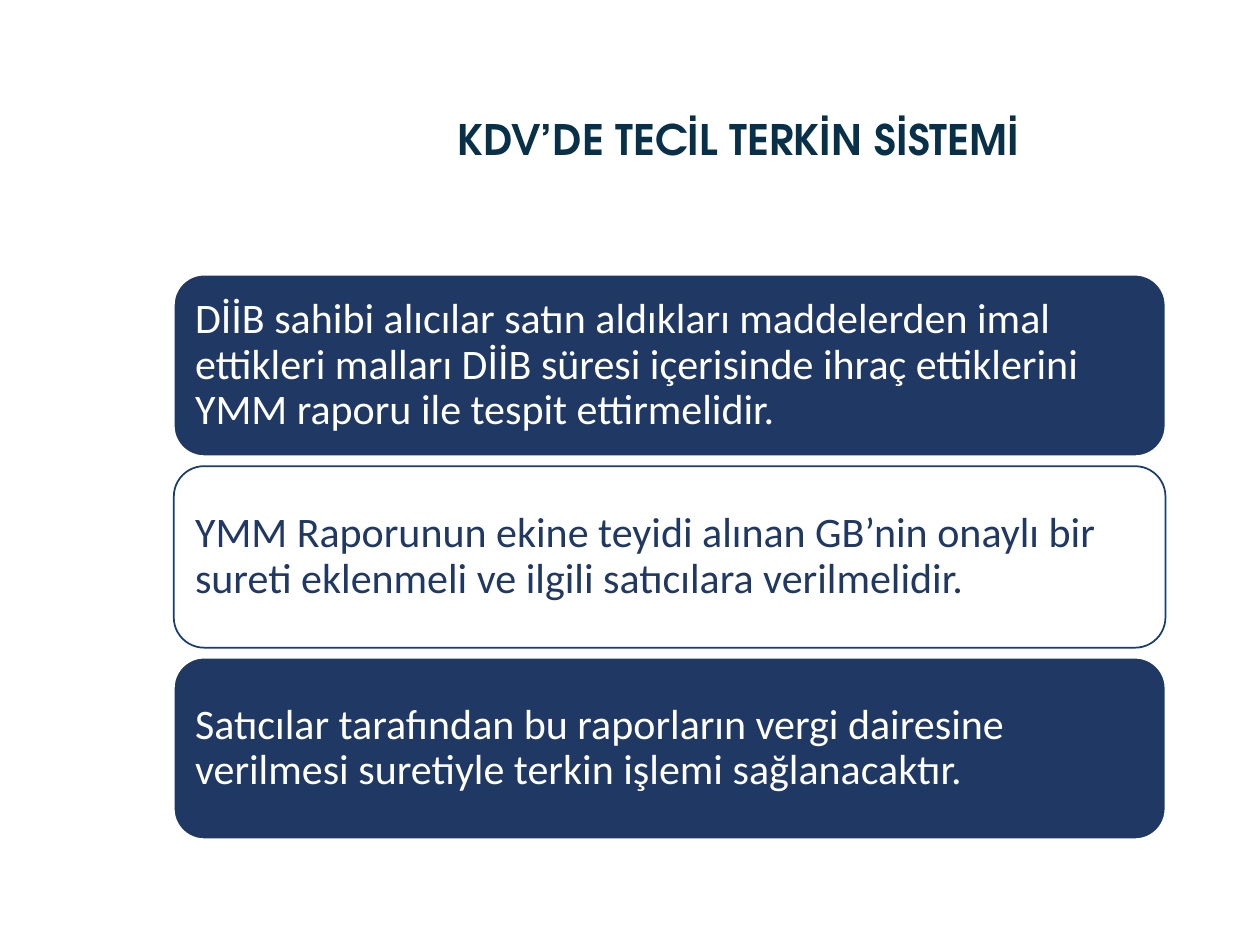
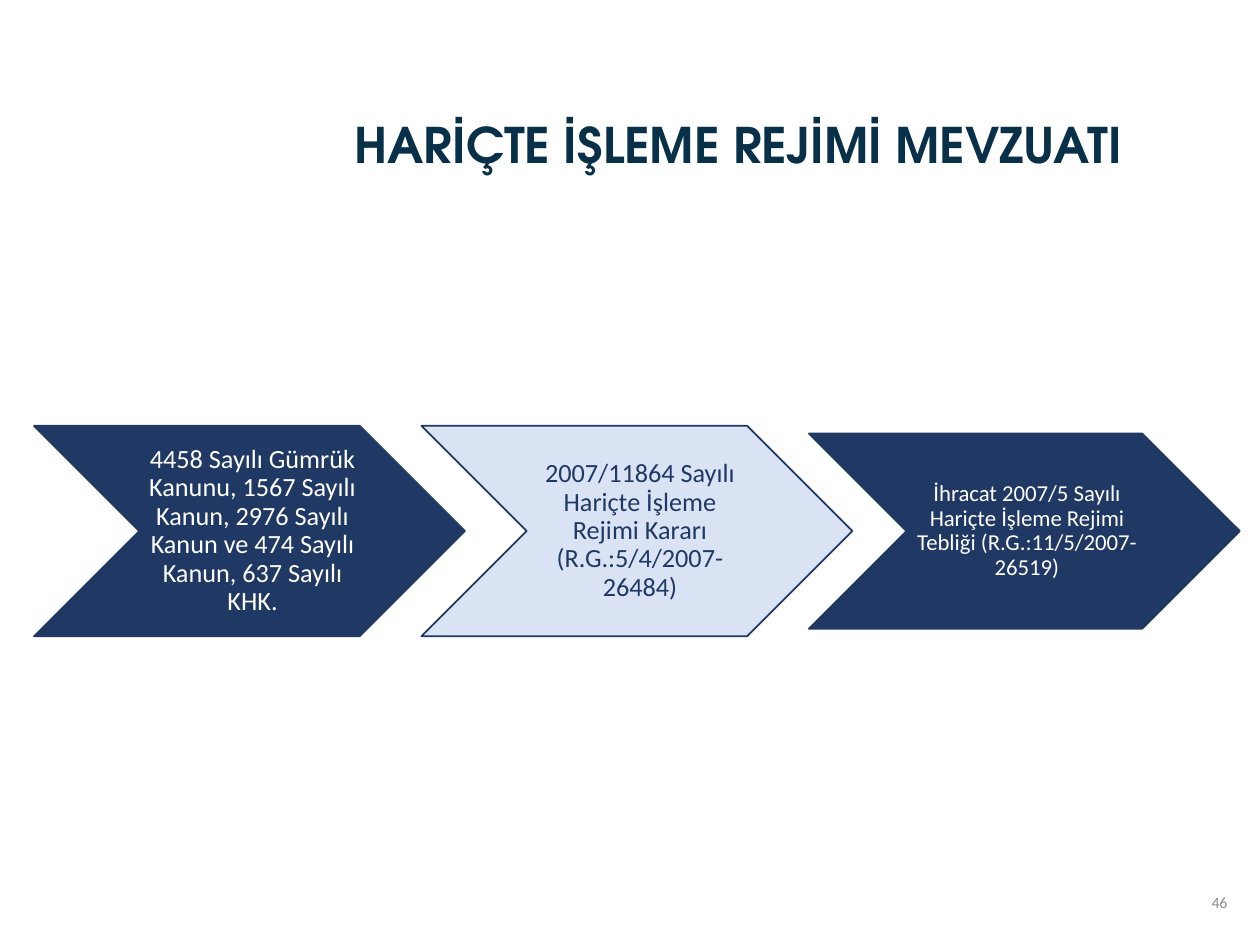
from pptx import Presentation
from pptx.dml.color import RGBColor
from pptx.enum.shapes import MSO_SHAPE
from pptx.enum.text import MSO_ANCHOR, PP_ALIGN
from pptx.util import Pt

NAVY = RGBColor(0x20, 0x38, 0x64)
EDGE = RGBColor(0x16, 0x3C, 0x74)
PALE = RGBColor(0xDA, 0xE3, 0xF3)
WHITE = RGBColor(0xFF, 0xFF, 0xFF)
TITLE = RGBColor(0x08, 0x30, 0x48)
GREY = RGBColor(0x8C, 0x8C, 0x8C)
BODY_FONT, TITLE_FONT = "Calibri", "TeX Gyre Adventor"

# Boxes: left, top, width, height in points
TITLE_BOX = (142.5, 29, 558.75, 104.25)
NUMBER_BOX = (546.5, 501, 162, 28.8)
CARDS_BOX = (99.36, 157, 566.64, 322.56)
CHEVRONS_BOX = (19.44, 243.36, 689.04, 120.24)

CARDS = [
    ("DİİB sahibi alıcılar satın aldıkları maddelerden imal ettikleri malları "
     "DİİB süresi içerisinde ihraç ettiklerini YMM raporu ile tespit ettirmelidir.",
     NAVY, WHITE, WHITE),
    ("YMM Raporunun ekine teyidi alınan GB’nin onaylı bir sureti eklenmeli ve "
     "ilgili satıcılara verilmelidir.", WHITE, EDGE, NAVY),
    ("Satıcılar tarafından bu raporların vergi dairesine verilmesi suretiyle "
     "terkin işlemi sağlanacaktır.", NAVY, WHITE, WHITE),
]
# Text, fill, text colour, text size, height
CHEVRONS = [
    ("4458 Sayılı Gümrük Kanunu, 1567 Sayılı Kanun, 2976 Sayılı Kanun ve "
     "474 Sayılı Kanun, 637 Sayılı KHK.", NAVY, WHITE, 15, 120.24),
    ("2007/11864 Sayılı Hariçte İşleme Rejimi Kararı (R.G.:5/4/2007-26484)",
     PALE, NAVY, 15, 120.24),
    ("İhracat 2007/5 Sayılı Hariçte İşleme Rejimi Tebliği "
     "(R.G.:11/5/2007-26519)", NAVY, WHITE, 13, 111.6),
]


def write(sp, text, size, color, align, font=BODY_FONT, bold=False,
          spacing=0.9, insets=(7.2, 3.6, 7.2, 3.6)):
    tf = sp.text_frame
    tf.word_wrap = True
    tf.vertical_anchor = MSO_ANCHOR.MIDDLE
    (tf.margin_left, tf.margin_top,
     tf.margin_right, tf.margin_bottom) = map(Pt, insets)
    p = tf.paragraphs[0]
    p.text = text
    p.alignment = align
    p.line_spacing = spacing
    p.font.name, p.font.size, p.font.bold = font, Pt(size), bold
    p.font.color.rgb = color
    return p


def add_box(s, kind, box, fill, line):
    sp = s.shapes.add_shape(kind, *map(Pt, box))
    sp.shadow.inherit = False
    sp.fill.solid()
    sp.fill.fore_color.rgb = fill
    sp.line.color.rgb = line
    sp.line.width = Pt(1)
    return sp


def add_title(s, box, text, size, spacing=0.9, after=0):
    sp = s.shapes.add_textbox(*map(Pt, box))
    p = write(sp, text, size, TITLE, PP_ALIGN.CENTER, TITLE_FONT, True, spacing)
    p.space_after = Pt(after)


def add_number(s, box, number):
    sp = s.shapes.add_textbox(*map(Pt, box))
    write(sp, str(number), 9, GREY, PP_ALIGN.RIGHT, spacing=1.0)


def add_cards(s, box, cards, gap=5.76):
    """Stack equal rounded cards down the box."""
    left, top, width, height = box
    card_h = (height - gap * (len(cards) - 1)) / len(cards)
    for i, (text, fill, line, color) in enumerate(cards):
        y = top + i * (card_h + gap)
        sp = add_box(s, MSO_SHAPE.ROUNDED_RECTANGLE,
                     (left, y, width, card_h), fill, line)
        write(sp, text, 24, color, PP_ALIGN.LEFT, insets=(7.2,) * 4)


def add_chevrons(s, box, chevrons, width=246.24):
    """Spread overlapping chevrons across the box, centred vertically."""
    left, top, total, height = box
    step = (total - width) / (len(chevrons) - 1)
    for i, (text, fill, color, size, h) in enumerate(chevrons):
        sp = add_box(s, MSO_SHAPE.CHEVRON,
                     (left + i * step, top + (height - h) / 2, width, h),
                     fill, NAVY)
        write(sp, text, size, color, PP_ALIGN.CENTER,
              insets=(size / 3, 1.5, 1.5, 1.5))


def main():
    prs = Presentation()
    prs.slide_width, prs.slide_height = Pt(720), Pt(540)
    blank = prs.slide_layouts[6]

    # Deferral and cancellation system
    s = prs.slides.add_slide(blank)
    add_title(s, TITLE_BOX, "KDV’DE TECİL TERKİN SİSTEMİ", 24)
    add_cards(s, CARDS_BOX, CARDS)

    # Outward processing legislation
    s = prs.slides.add_slide(blank)
    add_number(s, NUMBER_BOX, 46)
    add_title(s, TITLE_BOX, "HARİÇTE İŞLEME REJİMİ MEVZUATI", 28, 1.07, 8)
    add_chevrons(s, CHEVRONS_BOX, CHEVRONS)

    prs.save("out.pptx")


if __name__ == "__main__":
    main()
